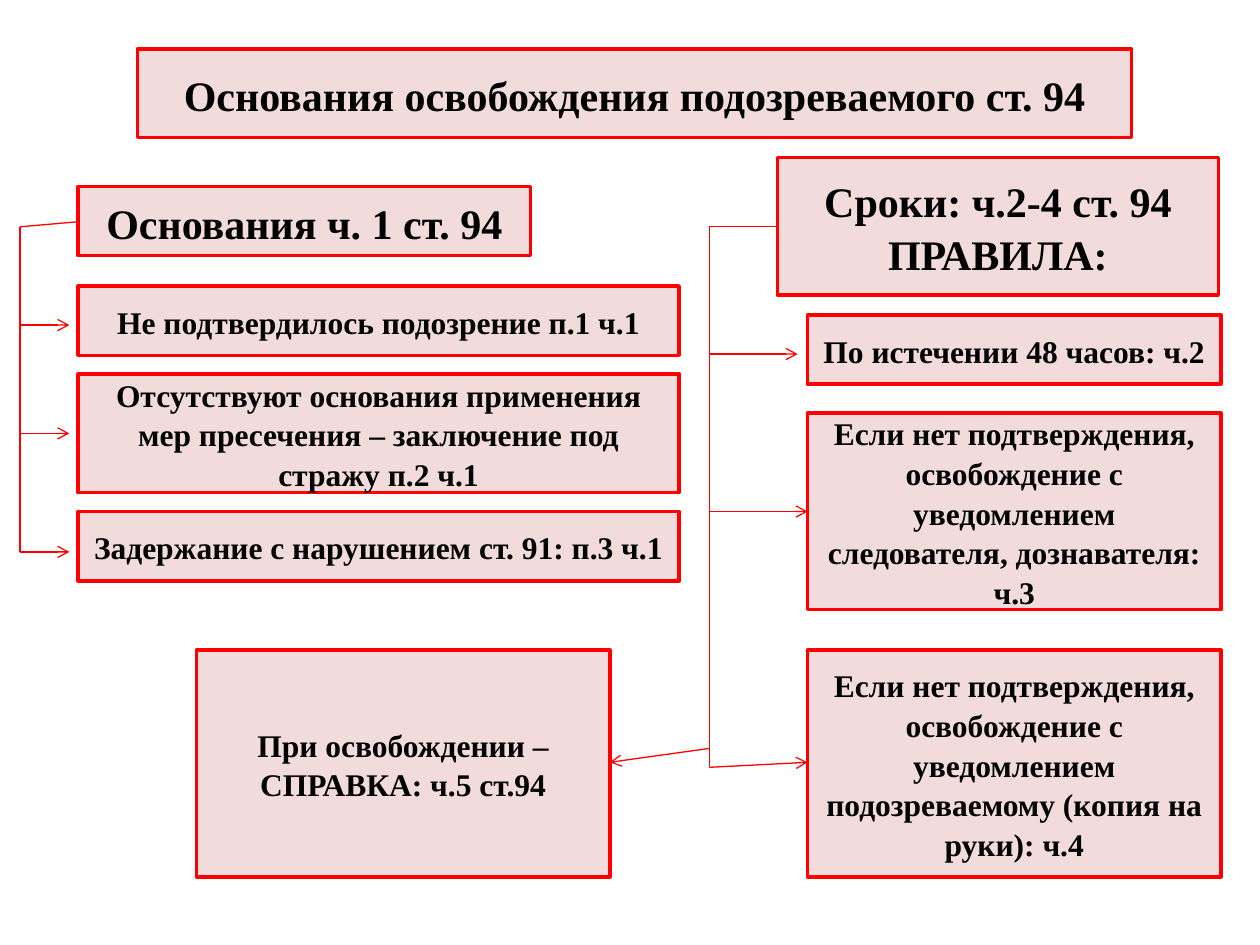
from lxml.etree import SubElement
from pptx import Presentation
from pptx.dml.color import RGBColor
from pptx.enum.shapes import MSO_CONNECTOR, MSO_SHAPE
from pptx.enum.text import MSO_ANCHOR, PP_ALIGN
from pptx.oxml.ns import qn
from pptx.util import Inches, Pt

RED = RGBColor(0xFF, 0x00, 0x00)
PINK = RGBColor(0xF2, 0xDC, 0xDB)
BLACK = RGBColor(0x00, 0x00, 0x00)

FRAME_FORMAT = {"word_wrap": True, "vertical_anchor": MSO_ANCHOR.MIDDLE}
PARAGRAPH_FORMAT = {"alignment": PP_ALIGN.CENTER, "line_spacing": 1.05}
FONT_FORMAT = {"name": "Times New Roman", "bold": True}

HEADING_SIZE = 24
BODY_SIZE = 18

GROUNDS_LEFT, GROUNDS_WIDTH = 0.62, 4.77
RULES_LEFT, RULES_WIDTH = 6.41, 3.28
GROUNDS_TRUNK, RULES_TRUNK = 0.16, 5.63
TRUNK_TOP = 1.8

HEADINGS = [
    ("Основания ч. 1 ст. 94", 0.62, 1.48, 3.59, 0.55),
    ("Сроки: ч.2-4 ст. 94\nПРАВИЛА:", 6.17, 1.25, 3.5, 1.09),
]
GROUNDS = [
    ("Не подтвердилось подозрение п.1 ч.1", 2.27, 0.55),
    ("Отсутствуют основания применения мер пресечения – заключение под стражу п.2 ч.1", 2.97, 0.94),
    ("Задержание с нарушением ст. 91: п.3 ч.1", 4.06, 0.55),
]
RULES = [
    ("По истечении 48 часов: ч.2", 2.5, 0.55),
    ("Если нет подтверждения, освобождение с уведомлением следователя, дознавателя: ч.3", 3.28, 1.56),
    ("Если нет подтверждения, освобождение с уведомлением подозреваемому (копия на руки): ч.4", 5.16, 1.8),
]
CERTIFICATE = "При освобождении – СПРАВКА: ч.5 ст.94"


def set_format(target, values):
    for name, value in values.items():
        setattr(target, name, value)


def format_box(box, text, size, left, top, width, height):
    set_format(box, {
        "left": Inches(left), "top": Inches(top),
        "width": Inches(width), "height": Inches(height),
    })
    box.fill.solid()
    box.fill.fore_color.rgb = PINK
    box.line.color.rgb = RED
    box.line.width = Pt(2)
    box.text_frame.text = text
    set_format(box.text_frame, FRAME_FORMAT)
    for para in box.text_frame.paragraphs:
        set_format(para, PARAGRAPH_FORMAT)
        for span in para.runs:
            set_format(span.font, FONT_FORMAT)
            span.font.size = Pt(size)
            span.font.color.rgb = BLACK


def add_box(page, text, size, left, top, width, height):
    box = page.shapes.add_shape(MSO_SHAPE.RECTANGLE, 0, 0, 0, 0)
    box.shadow.inherit = False
    format_box(box, text, size, left, top, width, height)


def add_line(page, start, end, arrow=False):
    points = [Inches(value) for value in (*start, *end)]
    line = page.shapes.add_connector(MSO_CONNECTOR.STRAIGHT, *points)
    line.line.color.rgb = RED
    line.line.width = Pt(0.75)
    if arrow:
        SubElement(line.line._get_or_add_ln(), qn("a:tailEnd"), type="arrow")
    SubElement(line._element.spPr, qn("a:effectLst"))


def add_branches(page, trunk, heading_point, ends):
    top = (trunk, TRUNK_TOP)
    add_line(page, top, (trunk, ends[-1][1]))
    add_line(page, top, heading_point)
    for start_y, end_y, end_x in [(y, y, x) for x, y in ends[:-1]]:
        add_line(page, (trunk, start_y), (end_x, end_y), arrow=True)


def main():
    deck = Presentation()
    deck.slide_width, deck.slide_height = Inches(10), Inches(7.5)
    page = deck.slides.add_slide(deck.slide_layouts[5])
    format_box(page.shapes.title, "Основания освобождения подозреваемого ст. 94",
               HEADING_SIZE, 1.09, 0.39, 7.89, 0.7)

    for text, *place in HEADINGS:
        add_box(page, text, HEADING_SIZE, *place)
    for text, top, height in GROUNDS:
        add_box(page, text, BODY_SIZE, GROUNDS_LEFT, top, GROUNDS_WIDTH, height)
    for text, top, height in RULES:
        add_box(page, text, BODY_SIZE, RULES_LEFT, top, RULES_WIDTH, height)
    add_box(page, CERTIFICATE, BODY_SIZE, 1.56, 5.16, RULES_WIDTH, 1.8)

    add_branches(page, GROUNDS_TRUNK, (0.62, 1.76),
                 [(0.55, 2.58), (0.55, 3.44), (0.55, 4.38)])
    add_line(page, (GROUNDS_TRUNK, 4.38), (0.55, 4.38), arrow=True)
    add_branches(page, RULES_TRUNK, (6.17, TRUNK_TOP),
                 [(6.33, 2.81), (RULES_LEFT, 4.06), (RULES_LEFT, 6.09)])
    add_line(page, (RULES_TRUNK, 6.09), (RULES_LEFT, 6.05), arrow=True)
    add_line(page, (RULES_TRUNK, 5.94), (4.84, 6.05), arrow=True)
    deck.save("out.pptx")


if __name__ == "__main__":
    main()
